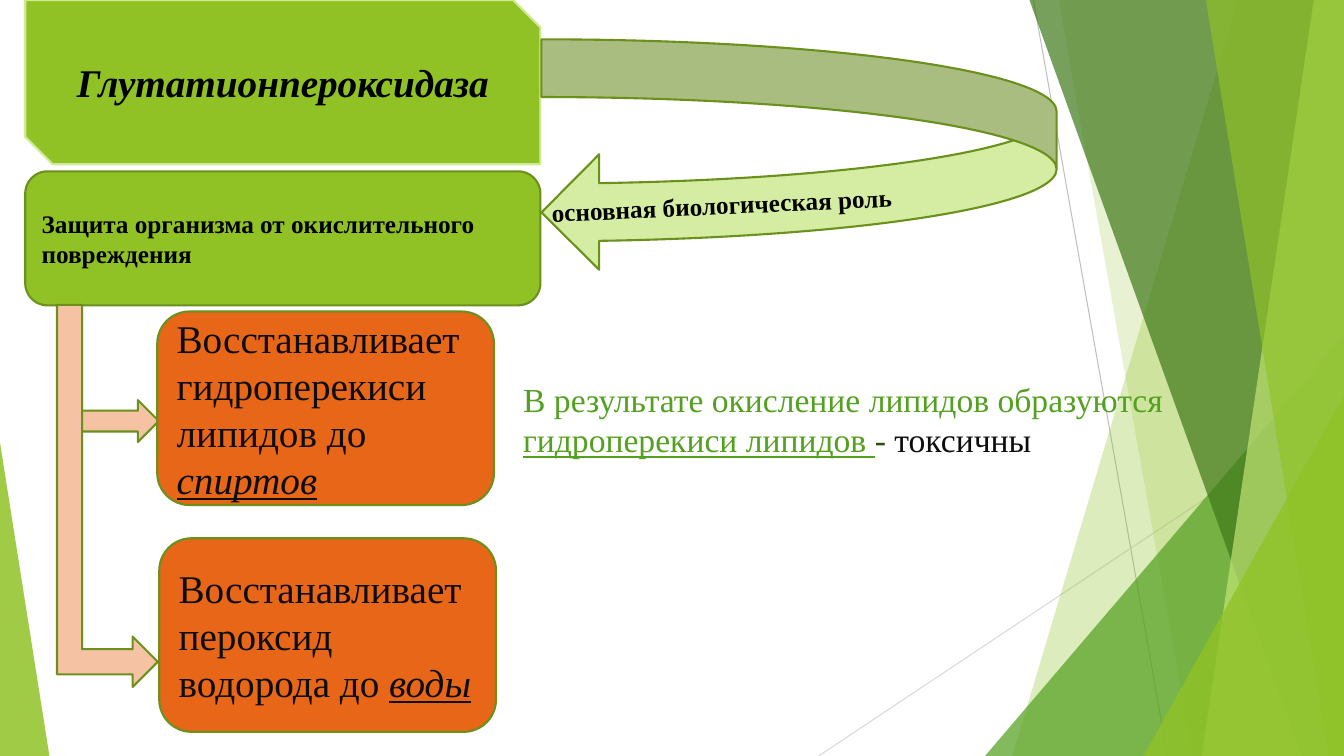
from dataclasses import dataclass

from lxml.etree import SubElement
from pptx import Presentation
from pptx.dml.color import RGBColor
from pptx.enum.shapes import MSO_CONNECTOR, MSO_SHAPE as SHAPE
from pptx.enum.text import MSO_ANCHOR as ANCHOR, MSO_AUTO_SIZE, PP_ALIGN as ALIGN
from pptx.oxml.ns import qn
from pptx.util import Inches, Pt


@dataclass(frozen=True)
class Theme:
    font: str = "Times New Roman"
    lime: str = "90C226"
    green: str = "54A021"
    forest: str = "3F7819"
    pale_lime: str = "C0E474"
    pale_edge: str = "D0EB96"
    edge: str = "6B901C"
    loop: str = "D5EDA2"
    peach: str = "F5C2A3"
    orange: str = "E76618"
    black: str = "000000"
    ink: str = "0D0D0D"
    dash: str = "2A5010"
    grey: str = "BFBFBF"
    light_grey: str = "D9D9D9"
    large: int = 28
    medium: int = 24
    small: int = 18


theme = Theme()
WIDTH, HEIGHT = 13.33, 7.5

deck = Presentation()
deck.slide_width, deck.slide_height = Inches(WIDTH), Inches(HEIGHT)
page = deck.slides.add_slide(deck.slide_layouts[6])
shapes = page.shapes


def paint(shape, fill, edge=None, opacity=100):
    """Give a shape its fill, outline and opacity in percent, without a shadow."""
    shape.shadow.inherit = False
    shape.fill.solid()
    shape.fill.fore_color.rgb = RGBColor.from_string(fill)
    if opacity < 100:
        color = shape.fill._xPr.find(qn("a:solidFill"))[0]
        SubElement(color, qn("a:alpha"), val=str(opacity * 1000))
    if edge:
        shape.line.color.rgb = RGBColor.from_string(edge)
        shape.line.width = Pt(1.5)
    else:
        shape.line.fill.background()


def write(shape, spans, size, align=ALIGN.LEFT, anchor=ANCHOR.MIDDLE):
    """Fill a shape with one paragraph of (text, color, font settings) spans."""
    frame = shape.text_frame
    frame.word_wrap = True
    frame.vertical_anchor = anchor
    para = frame.paragraphs[0]
    para.alignment = align
    for text, color, settings in spans:
        span = para.add_run()
        span.text = text
        span.font.color.rgb = RGBColor.from_string(color)
        for name, value in {"name": theme.font, "size": Pt(size), **settings}.items():
            setattr(span.font, name, value)


# Background rays
for start, end, color in [
    ((10.25, 0), (11.58, HEIGHT), theme.grey),
    ((WIDTH, 4.03), (8.12, HEIGHT), theme.light_grey),
]:
    ray = shapes.add_connector(MSO_CONNECTOR.STRAIGHT, *map(Inches, start + end))
    ray.line.color.rgb = RGBColor.from_string(color)
    ray.line.width = Pt(0.75)
    SubElement(ray._element.spPr, qn("a:effectLst"))

# Background facets, back to front: a band is (top x, bottom x) and runs to the
# right edge; a corner is (left, top, width, apex) and stands on the bottom edge.
facets = [
    ((12.28, 10.04), theme.lime, 30),
    ((10.5, 11.83), theme.lime, 20),
    ((9.77, 3.33, 3.56, 1), theme.green, 72),
    ((10.21, 12.91), theme.forest, 70),
    ((13.03, 11.92), theme.pale_lime, 70),
    ((11.96, 13.18), theme.lime, 65),
    ((11.34, 3.93, 1.99, 1), theme.lime, 80),
    ((0, 4.39, 0.49, 0), theme.lime, 85),
]
for place, color, opacity in facets:
    if len(place) == 2:
        top_x, bottom_x = place
        outline = shapes.build_freeform(Inches(top_x), 0)
        corners = [(WIDTH, 0), (WIDTH, HEIGHT), (bottom_x, HEIGHT)]
        outline.add_line_segments([(Inches(x), Inches(y)) for x, y in corners])
        facet = outline.convert_to_shape()
    else:
        left, top, width, apex = place
        facet = shapes.add_shape(
            SHAPE.ISOSCELES_TRIANGLE, *map(Inches, (left, top, width, HEIGHT - top)))
        facet.adjustments[0] = apex
    paint(facet, color, opacity=opacity)

# Enzyme, its role, and the loop between them
bold = {"bold": True}
marked = {"italic": True, "underline": True}

enzyme = shapes.add_shape(SHAPE.SNIP_2_DIAG_RECTANGLE, *map(Inches, (0.25, 0, 5.11, 1.63)))
paint(enzyme, theme.lime, theme.pale_edge)
write(enzyme, [("Глутатионпероксидаза", theme.black, {"bold": True, "italic": True})],
      theme.large, ALIGN.CENTER)

loop = shapes.add_shape(SHAPE.CURVED_LEFT_ARROW, *map(Inches, (5.37, 0.39, 5.11, 2.29)))
paint(loop, theme.loop, theme.edge)

role = shapes.add_shape(SHAPE.ROUNDED_RECTANGLE, *map(Inches, (0.25, 1.7, 5.11, 1.33)))
paint(role, theme.lime, theme.edge)
write(role, [("Защита организма от окислительного повреждения", theme.black, bold)], theme.small)

# Free text
notes = [
    ((5.09, 3.71, 6.68, 0.91), 0, theme.medium, [
        ("В результате окисление липидов образуются ", theme.green, {}),
        ("гидроперекиси липидов ", theme.green, {"underline": True}),
        ("- ", theme.dash, {}),
        ("токсичны", theme.ink, {}),
    ]),
    ((5.37, 1.76, 6.68, 0.4), 357.4, theme.small,
     [("основная биологическая роль", theme.black, bold)]),
]
for place, angle, size, spans in notes:
    box = shapes.add_textbox(*map(Inches, place))
    box.rotation = angle
    write(box, spans, size, anchor=ANCHOR.TOP)
    box.text_frame.auto_size = MSO_AUTO_SIZE.SHAPE_TO_FIT_TEXT

# Branches from the role to its two reactions
for place in [(0.66, 3.47, 0.83, 1), (-0.83, 4.42, 3.79, 1)]:
    branch = shapes.add_shape(SHAPE.BENT_UP_ARROW, *map(Inches, place))
    branch.rotation = 90
    paint(branch, theme.peach, theme.edge)

reactions = [
    (1.56, 3.09, "Восстанавливает гидроперекиси липидов до ", "спиртов"),
    (1.58, 5.34, "Восстанавливает пероксид водорода до ", "воды"),
]
for left, top, action, product in reactions:
    reaction = shapes.add_shape(
        SHAPE.ROUNDED_RECTANGLE, *map(Inches, (left, top, 3.34, 1.92)))
    paint(reaction, theme.orange, theme.edge)
    write(reaction, [(action, theme.ink, {}), (product, theme.ink, marked)], theme.large)

deck.save("out.pptx")
